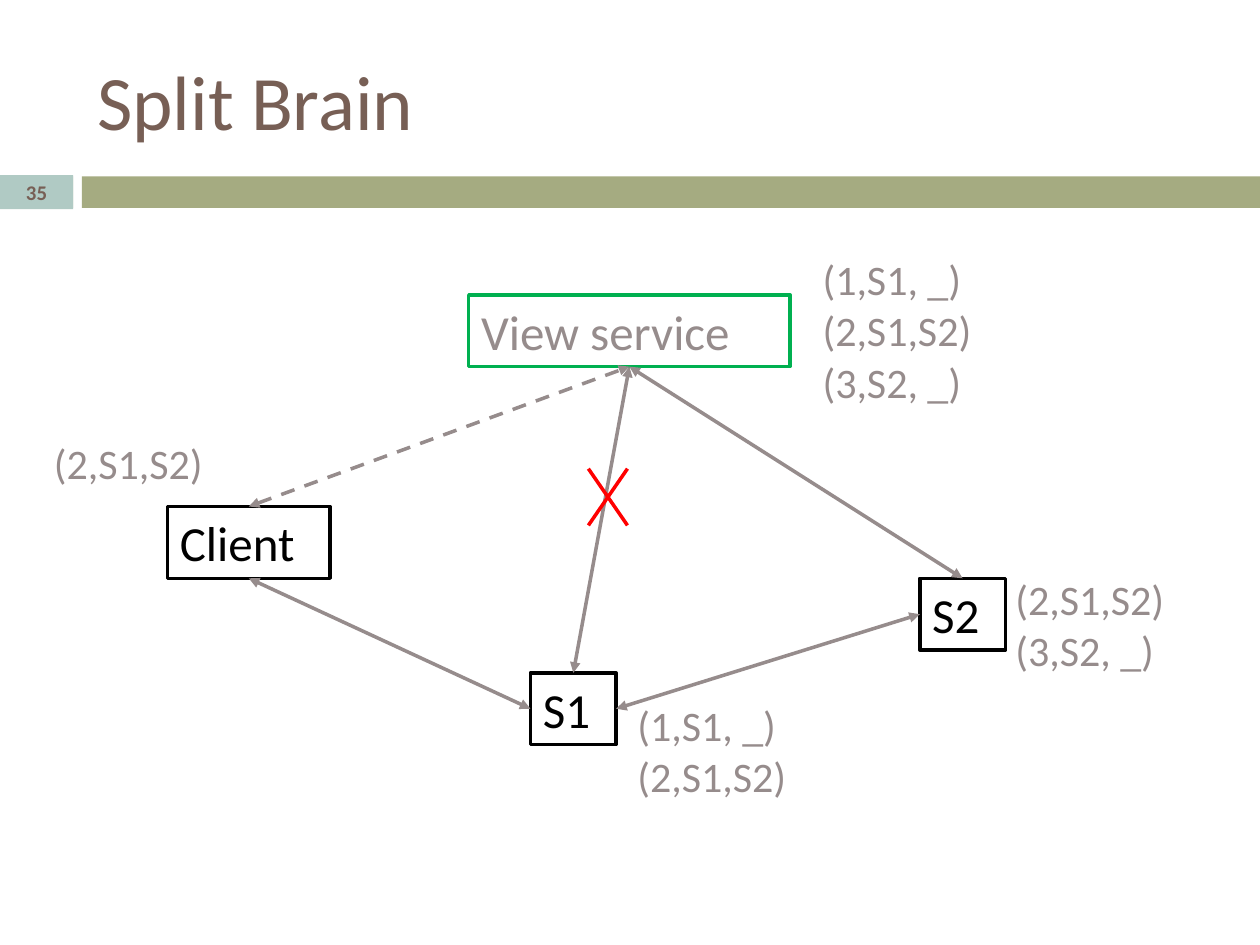
from pptx import Presentation
from pptx.dml.color import RGBColor
from pptx.enum.dml import MSO_LINE as Dash
from pptx.enum.shapes import MSO_CONNECTOR as Conn, MSO_SHAPE as Shape
from pptx.enum.text import MSO_ANCHOR as Anchor, PP_ALIGN as Align
from pptx.oxml.ns import qn
from pptx.util import Inches, Pt
from lxml.etree import SubElement

FONT = "Calibri"
BROWN, GRAY, BLACK, GREEN, RED = "775F55", "968C8C", "000000", "00B050", "FF0000"
TOP, LEFT, BOTTOM, RIGHT = range(4)  # connection sites of a rectangle

# Content
TITLE, NUMBER = "Split Brain", "35"
BANDS = [  # left, top, width, height, fill
    (0, 1.4, 0.58, 0.25, "C9CDB3"),
    (0.65, 1.4, 9.35, 0.25, "A5AB81"),
]
BADGE = (0, 1.39, 0.58, 0.27, "B0CAC4")
NODE_H = 0.57
NODES = {  # left, top, width, line, text colour
    "Client": (1.33, 4.02, 1.29, BLACK, BLACK),
    "S1": (4.21, 5.34, 0.68, BLACK, BLACK),
    "S2": (7.3, 4.59, 0.68, BLACK, BLACK),
    "View service": (3.72, 2.34, 2.55, GREEN, GRAY),
}
LINKS = [  # node, site, node, site, dashed
    ("Client", BOTTOM, "S1", LEFT, False),
    ("S1", RIGHT, "S2", LEFT, False),
    ("Client", TOP, "View service", BOTTOM, True),
    ("View service", BOTTOM, "S1", TOP, False),
    ("View service", BOTTOM, "S2", TOP, False),
]
VIEW1, VIEW2, VIEW3 = "(1,S1, _)", "(2,S1,S2)", "(3,S2, _)"
STEP = 0.41
STACKS = [  # left, top, views known there
    (6.43, 1.96, [VIEW1, VIEW2, VIEW3]),
    (4.96, 5.5, [VIEW1, VIEW2]),
    (7.96, 4.5, [VIEW2, VIEW3]),
    (0.33, 3.42, [VIEW2]),
]
CROSS = (4.67, 3.72, 4.98, 4.17)  # left, top, right, bottom


def color(code):
    return RGBColor.from_string(code)


def write(shape, text, size, code, bold=False):
    frame = shape.text_frame
    frame.text = text
    frame.word_wrap = True
    para = frame.paragraphs[0]
    para.alignment = Align.LEFT
    font = para.runs[0].font
    font.name, font.size, font.bold = FONT, Pt(size), bold
    font.color.rgb = color(code)
    return para


def rect(x, y, w, h, fill=None, line=None):
    box = slide.shapes.add_shape(Shape.RECTANGLE, *map(Inches, (x, y, w, h)))
    box.shadow.inherit = False
    if fill:
        box.fill.solid()
        box.fill.fore_color.rgb = color(fill)
    else:
        box.fill.background()
    if line:
        box.line.color.rgb = color(line)
        box.line.width = Pt(2)
    else:
        box.line.fill.background()
    return box


def stroke(shapes, code, x1=0, y1=0, x2=0, y2=0):
    line = shapes.add_connector(Conn.STRAIGHT, *map(Inches, (x1, y1, x2, y2)))
    line.line.color.rgb = color(code)
    line.line.width = Pt(2)
    SubElement(line._element.spPr, qn("a:effectLst"))
    return line


deck = Presentation()
deck.slide_width, deck.slide_height = Inches(10), Inches(7.5)
slide = deck.slides.add_slide(deck.slide_layouts[5])

# Title and bands
title = slide.shapes.title
title.left, title.top, title.width, title.height = map(Inches, (0.67, 0.25, 8.92, 1.08))
write(title, TITLE, 44, BROWN)
title.text_frame.vertical_anchor = Anchor.MIDDLE
for band in BANDS:
    rect(*band)

# Nodes
nodes = {}
for name, (x, y, w, edge, ink) in NODES.items():
    nodes[name] = rect(x, y, w, NODE_H, line=edge)
    write(nodes[name], name, 28, ink)

# Two-way links
for start, out, end, into, dashed in LINKS:
    link = stroke(slide.shapes, GRAY)
    link.begin_connect(nodes[start], out)
    link.end_connect(nodes[end], into)
    if dashed:
        link.line.dash_style = Dash.DASH
    for tip in ("a:headEnd", "a:tailEnd"):
        SubElement(link.line._get_or_add_ln(), qn(tip), type="triangle")

# Views beside the nodes
for x, y, views in STACKS:
    for row, view in enumerate(views):
        label = slide.shapes.add_textbox(*map(Inches, (x, y + row * STEP, 1.62, 0.5)))
        write(label, view, 24, GRAY)

# Cross on the broken link
x1, y1, x2, y2 = CROSS
cross = slide.shapes.add_group_shape()
stroke(cross.shapes, RED, x1, y1, x2, y2)
stroke(cross.shapes, RED, x2, y1, x1, y2)

# Slide number
badge = rect(*BADGE)
write(badge, NUMBER, 11.9, BROWN, bold=True).alignment = Align.CENTER
badge.text_frame.vertical_anchor = Anchor.MIDDLE

deck.save("out.pptx")
